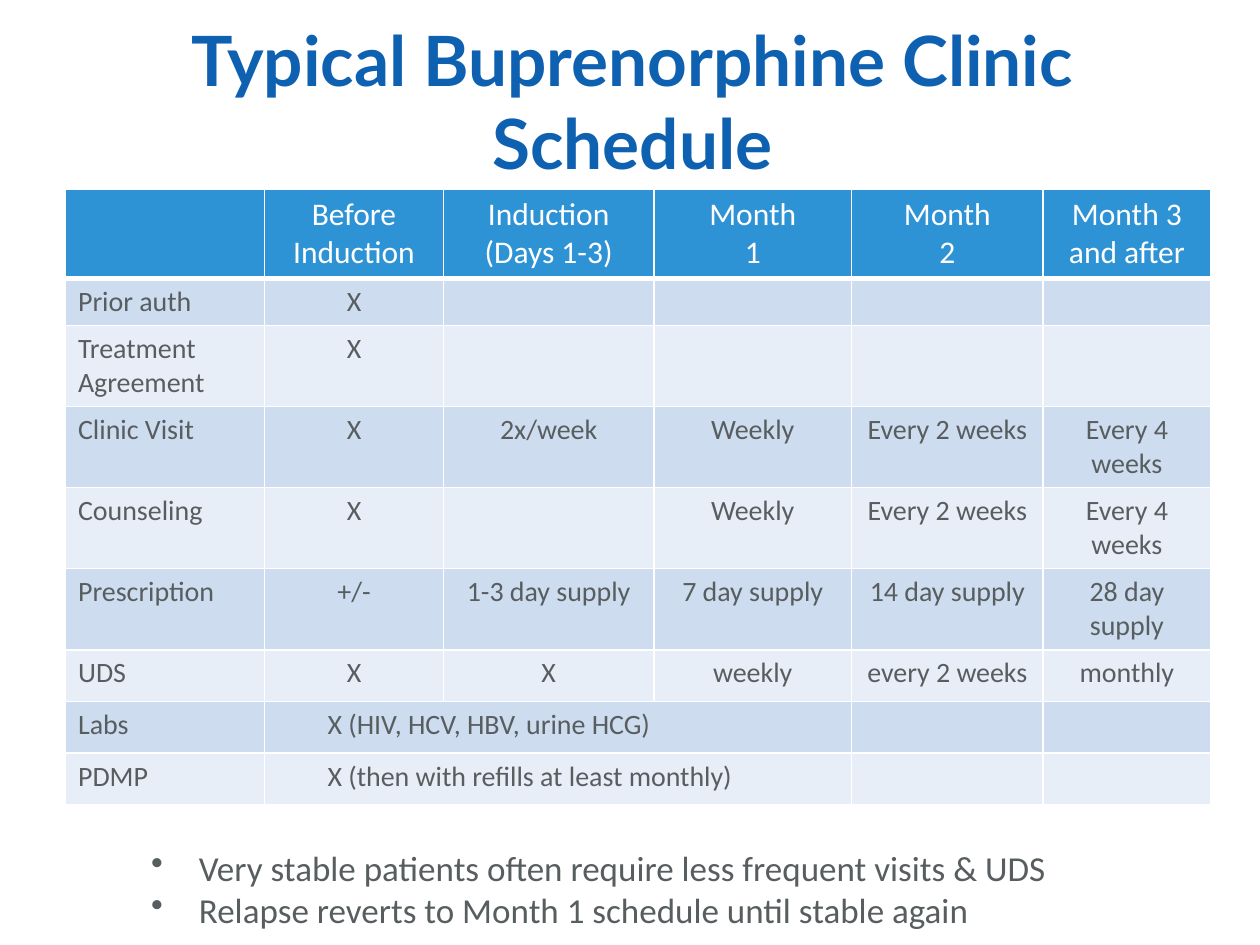
from dataclasses import dataclass

from lxml import etree
from pptx import Presentation
from pptx.dml.color import RGBColor
from pptx.enum.text import MSO_ANCHOR, MSO_AUTO_SIZE, PP_ALIGN
from pptx.oxml.ns import qn
from pptx.util import Inches, Pt

LEFT, CENTER = PP_ALIGN.LEFT, PP_ALIGN.CENTER
MIDDLE, FIXED = MSO_ANCHOR.MIDDLE, MSO_AUTO_SIZE.NONE
TITLE_ONLY = 5


@dataclass(frozen=True)
class Theme:
    title_font: str = "Lato"
    body_font: str = "Calibri"
    title: str = "0E61B0"
    header: str = "2E93D5"
    bands: tuple = ("CDDCEF", "E8EEF7")
    white: str = "FFFFFF"
    ink: str = "585E60"
    title_size: float = 39.6
    header_size: float = 18
    cell_size: float = 16
    note_size: float = 20


THEME = Theme()
TITLE = "Typical Buprenorphine Clinic Schedule"
COLUMNS = [1.58, 1.42, 1.67, 1.57, 1.52, 1.33]
ROWS = [0.7, 0.37] + [0.64] * 4 + [0.41] * 3
SCHEDULE = [
    ["", "Before Induction", "Induction\n(Days 1-3)", "Month\n1", "Month\n2",
     "Month 3 and after"],
    ["Prior auth", "X", "", "", "", ""],
    ["Treatment Agreement", "X", "", "", "", ""],
    ["Clinic Visit", "X", "2x/week", "Weekly", "Every 2 weeks", "Every 4 weeks"],
    ["Counseling", "X", "", "Weekly", "Every 2 weeks", "Every 4 weeks"],
    ["Prescription", "+/-", "1-3 day supply", "7 day supply", "14 day supply",
     "28 day supply"],
    ["UDS", "X", "X", "weekly", "every 2 weeks", "monthly"],
    ["Labs", "X (HIV, HCV, HBV, urine HCG)", "", "", "", ""],
    ["PDMP", "X (then with refills at least monthly)", "", "", "", ""],
]
MERGED_ROWS = (7, 8)
NOTES = ("Very stable patients often require less frequent visits & UDS\n"
         "Relapse reverts to Month 1 schedule until stable again")


def write_text(frame, text, *, size, color, font=THEME.body_font, bold=False,
               align=LEFT, indent=0, bullet=None):
    """Write one paragraph per line, all in the same format."""
    frame.word_wrap = True
    for index, line in enumerate(text.split("\n")):
        para = frame.add_paragraph() if index else frame.paragraphs[0]
        para.alignment = align
        if indent:
            properties = para._p.get_or_add_pPr()
            properties.set("marL", str(Inches(indent)))
            if bullet:
                properties.set("indent", str(-Inches(indent)))
                etree.SubElement(properties, qn("a:buChar"), char=bullet)
        if not line:
            # An empty line still sets the row height
            etree.SubElement(para._p, qn("a:endParaRPr"), sz=str(int(size * 100)))
            continue
        span = para.add_run()
        span.text = line
        span.font.name = font
        span.font.size = Pt(size)
        span.font.bold = bold
        span.font.color.rgb = RGBColor.from_string(color)


def style_cell(cell, fill, bottom=1):
    """Fill a cell and give it white borders."""
    cell.fill.solid()
    cell.fill.fore_color.rgb = RGBColor.from_string(fill)
    properties = cell._tc.get_or_add_tcPr()
    for index, (side, width) in enumerate(
            [("lnL", 1), ("lnR", 1), ("lnT", 1), ("lnB", bottom)]):
        line = etree.Element(qn(f"a:{side}"), w=str(Pt(width)))
        paint = etree.SubElement(line, qn("a:solidFill"))
        etree.SubElement(paint, qn("a:srgbClr"), val=THEME.white)
        properties.insert(index, line)


def add_title(page):
    box = page.shapes.title
    box.left, box.top, box.width, box.height = map(Inches, (0.52, 0.17, 9, 1.25))
    frame = box.text_frame
    frame.auto_size, frame.vertical_anchor = FIXED, MIDDLE
    write_text(frame, TITLE, size=THEME.title_size, color=THEME.title,
               font=THEME.title_font, bold=True, align=CENTER)


def add_schedule(page):
    table = page.shapes.add_table(
        len(ROWS), len(COLUMNS), Inches(0.52), Inches(1.5),
        Inches(sum(COLUMNS)), Inches(sum(ROWS))).table
    table.first_row = table.horz_banding = False
    for column, width in zip(table.columns, COLUMNS):
        column.width = Inches(width)
    for row, height in zip(table.rows, ROWS):
        row.height = Inches(height)

    for r, values in enumerate(SCHEDULE):
        header = r == 0
        for c, value in enumerate(values):
            cell = table.cell(r, c)
            style_cell(cell, THEME.header if header else THEME.bands[(r - 1) % 2],
                       bottom=3 if header else 1)
            wide = r in MERGED_ROWS and c == 1
            write_text(cell.text_frame, value,
                       size=THEME.header_size if header else THEME.cell_size,
                       color=THEME.white if header else THEME.ink,
                       align=LEFT if c == 0 or wide else CENTER,
                       indent=0.4 if wide else 0)
    # Remarks run across the first three phases
    for r in MERGED_ROWS:
        table.cell(r, 1).merge(table.cell(r, 3))


def add_notes(page):
    box = page.shapes.add_textbox(*map(Inches, (1.1, 6.67, 8.42, 0.77)))
    write_text(box.text_frame, NOTES, size=THEME.note_size, color=THEME.ink,
               indent=0.38, bullet="•")


def main():
    deck = Presentation()
    deck.slide_width, deck.slide_height = Inches(10), Inches(7.5)
    page = deck.slides.add_slide(deck.slide_layouts[TITLE_ONLY])
    add_schedule(page)
    add_title(page)
    add_notes(page)
    deck.save("out.pptx")


if __name__ == "__main__":
    main()
